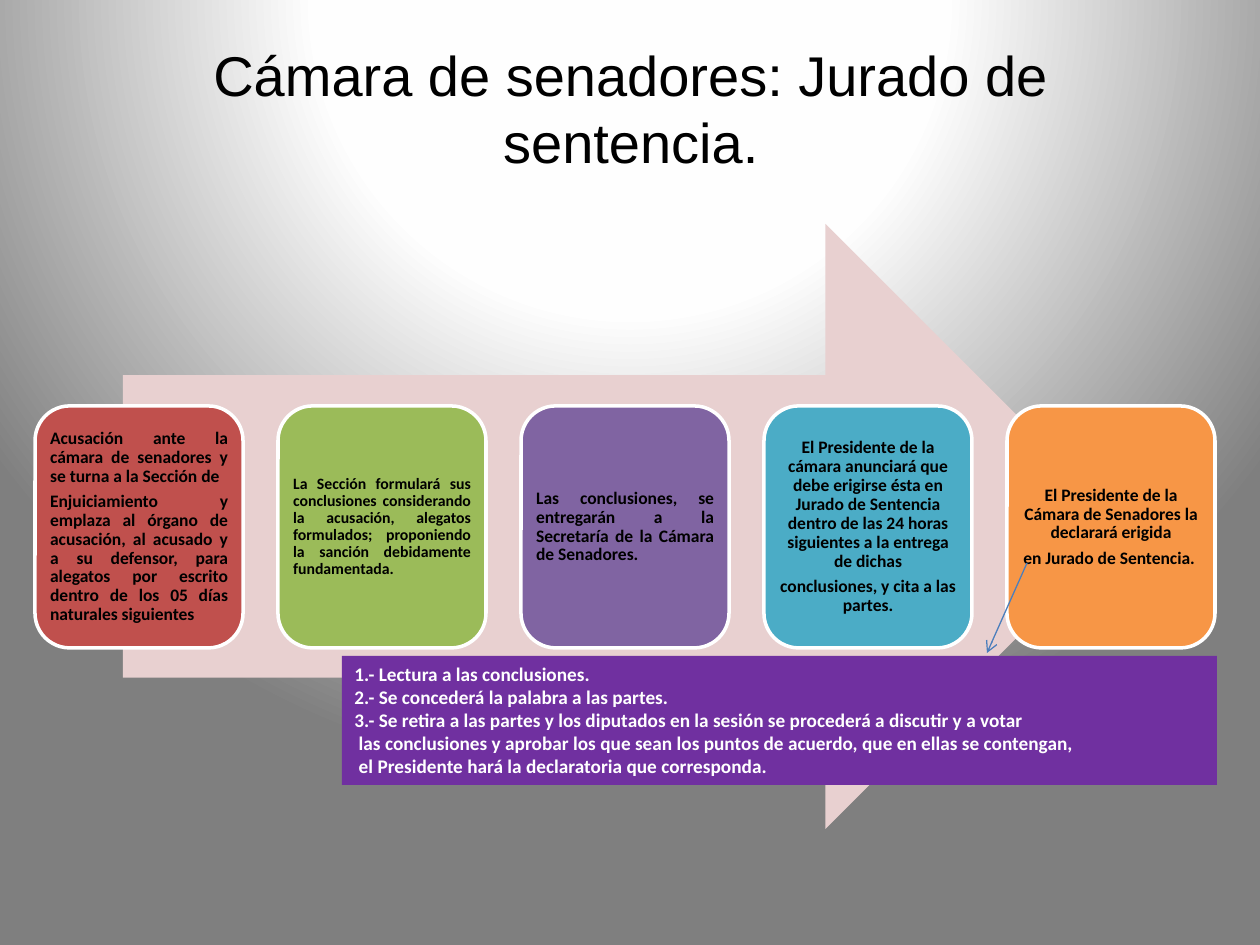
import pptx
import pptx.dml.color
import pptx.enum.shapes
import pptx.enum.text
import pptx.oxml
import pptx.oxml.ns
import pptx.util

EMU_PER_PX = 914400 / 126
SHAPES = pptx.enum.shapes.MSO_SHAPE
ALIGN = pptx.enum.text.PP_ALIGN
ANCHOR = pptx.enum.text.MSO_ANCHOR

STEPS = [
    ("C0504D", 10, ALIGN.JUSTIFY, [
        "Acusación ante la cámara de senadores y se turna a la Sección de",
        "Enjuiciamiento y emplaza al órgano de acusación, al acusado y a su defensor, "
        "para alegatos por escrito dentro de los 05 días naturales siguientes"]),
    ("9BBB59", 9, ALIGN.JUSTIFY, [
        "La Sección formulará sus conclusiones considerando la acusación, alegatos "
        "formulados; proponiendo la sanción debidamente fundamentada."]),
    ("8064A2", 10, ALIGN.JUSTIFY, [
        "Las conclusiones, se entregarán a la Secretaría de la Cámara de Senadores."]),
    ("4BACC6", 10, ALIGN.CENTER, [
        "El Presidente de la cámara anunciará que debe erigirse ésta en Jurado de "
        "Sentencia dentro de las 24 horas siguientes a la entrega de dichas",
        "conclusiones, y cita a las partes."]),
    ("F79646", 10, ALIGN.CENTER, [
        "El Presidente de la Cámara de Senadores la declarará erigida",
        "en Jurado de Sentencia. "]),
]
SESSION_LINES = [
    "1.- Lectura a las conclusiones. ",
    "2.- Se concederá la palabra a las partes. ",
    "3.- Se retira a las partes y los diputados en la sesión se procederá a discutir y a votar",
    " las conclusiones y aprobar los que sean los puntos de acuerdo, que en ellas se contengan,",
    " el Presidente hará la declaratoria que corresponda. ",
]


def px(length):
    """Turn pixels into EMU."""
    return pptx.util.Emu(round(length * EMU_PER_PX))


def color(hex_string):
    """Turn a hex string into a colour."""
    return pptx.dml.color.RGBColor.from_string(hex_string)


def set_background(slide):
    """Give the slide a circular white to grey gradient."""
    slide.background.fill.solid()
    properties = slide.background._cSld.bg.bgPr
    stops = "".join(
        f'<a:gs pos="{position * 1000}"><a:srgbClr val="{hex_string}"/></a:gs>'
        for position, hex_string in [(0, "FFFFFF"), (40, "FEFEFE"), (100, "7F7F7F")])
    gradient = pptx.oxml.parse_xml(
        f'<a:gradFill {pptx.oxml.ns.nsdecls("a")} rotWithShape="1"><a:gsLst>{stops}</a:gsLst>'
        '<a:path path="circle"><a:fillToRect l="50000" t="-80000" r="50000" b="180000"/>'
        '</a:path></a:gradFill>')
    properties.replace(properties[0], gradient)


def write_paragraphs(frame, texts, font, size, hex_string, alignment, bold=False):
    """Write one paragraph per text and return the paragraphs."""
    for index, text in enumerate(texts):
        paragraph = frame.paragraphs[0] if index == 0 else frame.add_paragraph()
        paragraph.alignment = alignment
        run = paragraph.add_run()
        run.text = text
        run.font.name = font
        run.font.size = pptx.util.Pt(size)
        run.font.bold = bold
        run.font.color.rgb = color(hex_string)
    return frame.paragraphs


def add_title(slide, text):
    """Place and fill the title placeholder."""
    title = slide.shapes.title
    title.left, title.top, title.width, title.height = map(px, (113, 50, 1036, 115))
    title.text_frame.vertical_anchor = ANCHOR.MIDDLE
    write_paragraphs(title.text_frame, [text], "Arial", 32, "000000", ALIGN.CENTER)


def add_filled_shape(slide, kind, box, fill):
    """Add a plain filled shape without outline or shadow."""
    shape = slide.shapes.add_shape(kind, *map(px, box))
    shape.shadow.inherit = False
    shape.fill.solid()
    shape.fill.fore_color.rgb = color(fill)
    shape.line.fill.background()
    return shape


def add_step(slide, left, fill, size, alignment, texts):
    """Add one rounded step box with its text."""
    shape = add_filled_shape(slide, SHAPES.ROUNDED_RECTANGLE, (left, 406, 208, 242), fill)
    shape.line.color.rgb = color("FFFFFF")
    shape.line.width = pptx.util.Pt(2)
    frame = shape.text_frame
    frame.word_wrap = True
    frame.vertical_anchor = ANCHOR.MIDDLE
    frame.margin_left = frame.margin_right = frame.margin_top = frame.margin_bottom = px(5)
    for paragraph in write_paragraphs(frame, texts, "Calibri", size, "000000", alignment, True):
        paragraph.line_spacing = 0.9
        paragraph.space_after = pptx.util.Pt(3.5)


def add_arrow_line(slide, start, end):
    """Add a thin line with an open arrowhead at its end."""
    connector = slide.shapes.add_connector(
        pptx.enum.shapes.MSO_CONNECTOR.STRAIGHT, *map(px, start + end))
    connector.line.color.rgb = color("4B7EBC")
    connector.line.width = pptx.util.Pt(0.75)
    namespace = pptx.oxml.ns.nsdecls("a")
    connector.line._get_or_add_ln().append(
        pptx.oxml.parse_xml(f'<a:tailEnd {namespace} type="arrow"/>'))
    connector._element.spPr.append(pptx.oxml.parse_xml(f"<a:effectLst {namespace}/>"))


def add_session_panel(slide):
    """Add the panel that lists the stages of the session."""
    panel = add_filled_shape(slide, SHAPES.RECTANGLE, (342, 656, 875, 129), "7030A0")
    frame = panel.text_frame
    frame.word_wrap = True
    frame.vertical_anchor = ANCHOR.TOP
    write_paragraphs(frame, SESSION_LINES, "Calibri", 11, "FFFFFF", ALIGN.JUSTIFY, True)


def main():
    """Build and save the slide."""
    presentation = pptx.Presentation()
    presentation.slide_width, presentation.slide_height = px(1260), px(945)
    slide = presentation.slides.add_slide(presentation.slide_layouts[5])
    set_background(slide)
    add_title(slide, "Cámara de senadores: Jurado de sentencia.")
    add_filled_shape(slide, SHAPES.RIGHT_ARROW, (123, 224, 1005, 605), "E8D0D0")
    for index, step in enumerate(STEPS):
        add_step(slide, 35 + 243 * index, *step)
    add_arrow_line(slide, (1027, 563), (987, 653))
    add_session_panel(slide)
    presentation.save("out.pptx")


if __name__ == "__main__":
    main()
